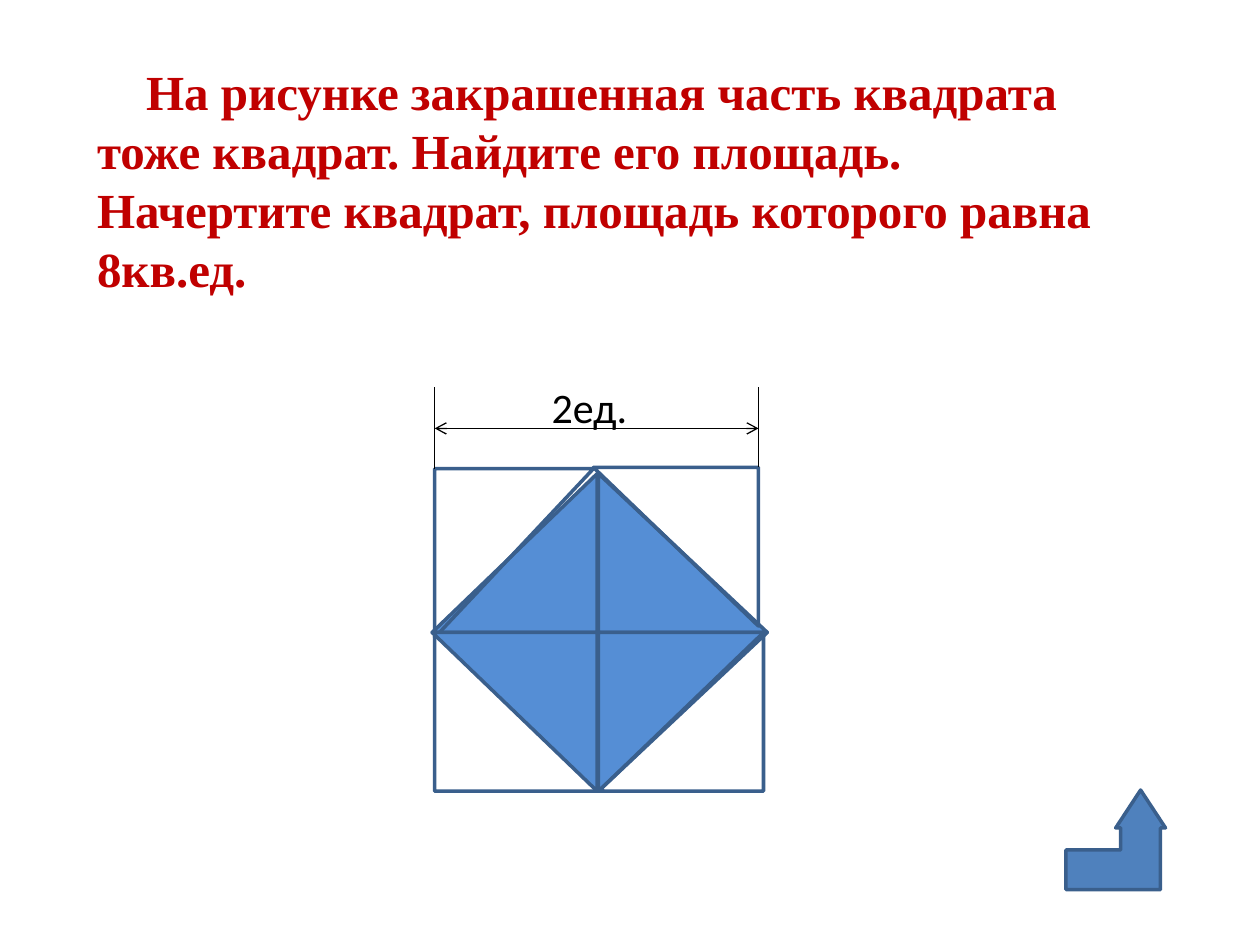
from pptx import Presentation
from pptx import util as u
from pptx.dml.color import RGBColor
from pptx.enum import shapes as sh, text as tx
from pptx.oxml import ns, xmlchemy as xc

RED = RGBColor(0xC0, 0x00, 0x00)
BLACK = RGBColor(0, 0, 0)
BLUE = RGBColor(0x55, 0x8E, 0xD5)
STEEL = RGBColor(0x4F, 0x81, 0xBD)
EDGE = RGBColor(0x3A, 0x5F, 0x8C)
KIND = sh.MSO_SHAPE

TASK = ("На рисунке закрашенная часть квадрата тоже квадрат. Найдите его площадь. "
        "Начертите квадрат, площадь которого равна 8кв.ед.")
LABEL = "2ед."
TASK_FONT = dict(name="Times New Roman", size=u.Pt(28), bold=True)
LABEL_FONT = dict(name="Calibri", size=u.Pt(24))
FRAME = dict(word_wrap=True, vertical_anchor=tx.MSO_ANCHOR.TOP,
             auto_size=tx.MSO_AUTO_SIZE.SHAPE_TO_FIT_TEXT)

LEFT, RIGHT, TOP, MID = 3.45, 6.02, 3.76, 5.02
SIDE, WIDE, HIGH = 1.31, 1.34, 1.26
CORNERS = [
    (3.43, TOP, SIDE, "h", 0, BLUE),
    (3.41, TOP, WIDE, "", 90, None),
    (4.75, TOP, WIDE, "", 0, BLUE),
    (LEFT, MID, WIDE, "", 0, None),
    (3.43, MID, SIDE, "hv", 0, BLUE),
    (4.75, MID, WIDE, "v", 0, BLUE),
    (4.71, 3.71, SIDE, "hv", 0, None),
    (4.75, MID, SIDE, "h", 0, None),
]
RULES = [
    (LEFT, 3.72, LEFT, 3.07, False),
    (RIGHT, 3.71, RIGHT, 3.07, False),
    (LEFT, 3.4, RIGHT, 3.4, True),
]


def put(obj, vals):
    for key, val in vals.items():
        setattr(obj, key, val)


def inch(*vals):
    return [u.Inches(v) for v in vals]


def draw(home, kind, box, fill):
    part = home.add_shape(kind, *inch(*box))
    part.shadow.inherit = False
    if fill is None:
        part.fill.background()
    else:
        part.fill.solid()
        part.fill.fore_color.rgb = fill
    part.line.color.rgb = EDGE
    part.line.width = u.Pt(2)
    return part


def write(box, words, font, hue, wrap=True):
    frame = box.text_frame
    put(frame, {**FRAME, "word_wrap": wrap})
    para = frame.paragraphs[0]
    para.alignment = tx.PP_ALIGN.LEFT
    run = para.add_run()
    run.text = words
    put(run.font, font)
    run.font.color.rgb = hue
    return para


def rule(home, ends, heads):
    line = home.add_connector(sh.MSO_CONNECTOR.STRAIGHT, *inch(*ends))
    line.line.color.rgb = BLACK
    line.line.width = u.Pt(0.75)
    props = line.element.spPr
    if heads:
        for tag in ("a:headEnd", "a:tailEnd"):
            end = xc.OxmlElement(tag)
            end.set("type", "arrow")
            props.find(ns.qn("a:ln")).append(end)
    props.append(xc.OxmlElement("a:effectLst"))


def main():
    deck = Presentation()
    deck.slide_width, deck.slide_height = inch(10, 7.5)
    slide = deck.slides.add_slide(deck.slide_layouts[5])

    title = slide.shapes.title
    put(title, dict(zip(("left", "top", "width", "height"), inch(0.67, 0.44, 8.19, 1.99))))
    para = write(title, TASK, TASK_FONT, RED)
    para._p.get_or_add_pPr().set("indent", str(u.Inches(0.39)))

    back = draw(slide.shapes, KIND.BENT_UP_ARROW, (8.46, 6.27, 0.79, 0.79), STEEL)
    for i, val in enumerate((0.399, 0.25, 0.381)):
        back.adjustments[i] = round(val, 3)

    home = slide.shapes.add_group_shape().shapes
    for left, top, wide, flip, turn, fill in CORNERS:
        part = draw(home, KIND.RIGHT_TRIANGLE, (left, top, wide, HIGH), fill)
        part.rotation = turn
        for axis in flip:
            part.element.spPr.find(ns.qn("a:xfrm")).set("flip" + axis.upper(), "1")
    for *ends, heads in RULES:
        rule(home, ends, heads)
    write(home.add_textbox(*inch(4.28, 2.98, 0.86, 0.5)), LABEL, LABEL_FONT, BLACK, False)

    deck.save("out.pptx")


if __name__ == "__main__":
    main()
